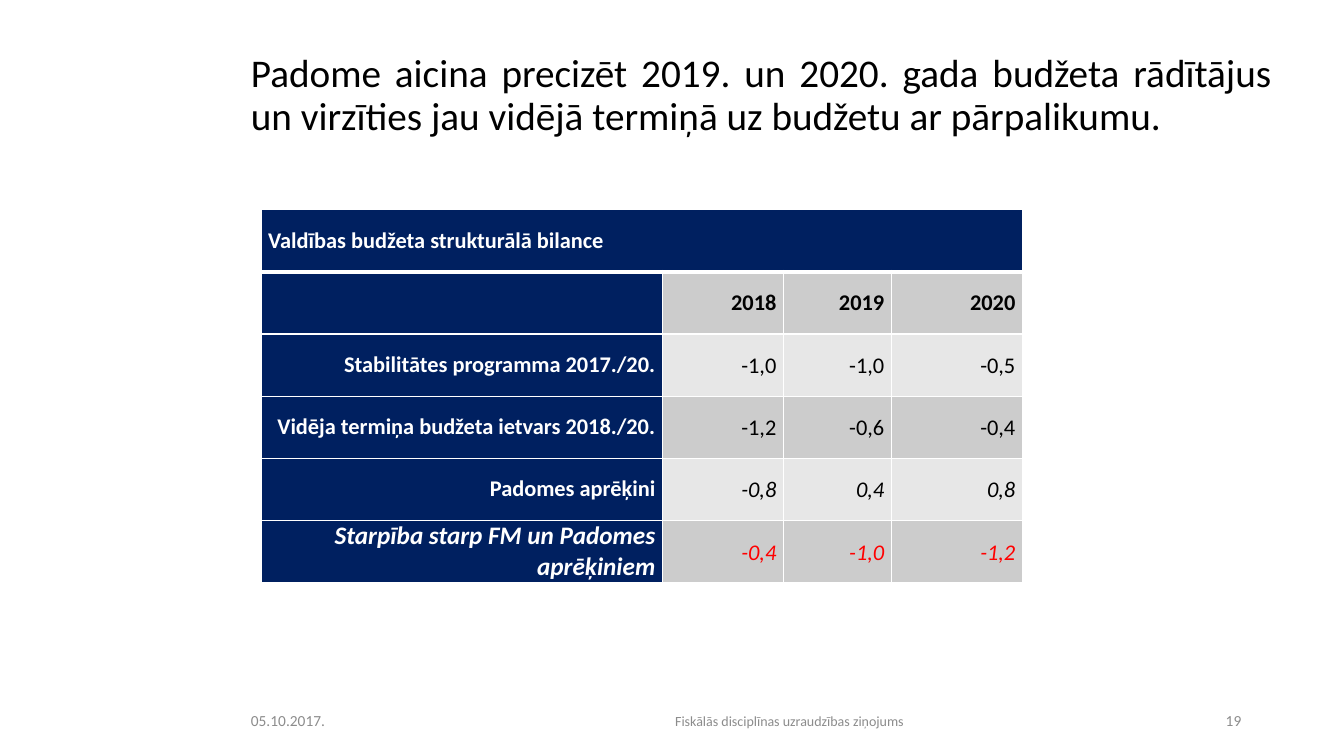
from lxml import etree
from pptx import Presentation
from pptx.dml.color import RGBColor
from pptx.enum.text import MSO_ANCHOR, PP_ALIGN
from pptx.oxml.ns import qn
from pptx.util import Inches, Pt

LEFT, CENTER, RIGHT, JUSTIFY = PP_ALIGN.LEFT, PP_ALIGN.CENTER, PP_ALIGN.RIGHT, PP_ALIGN.JUSTIFY
MIDDLE = MSO_ANCHOR.MIDDLE
FONT = "Calibri"
BLACK, WHITE, RED, NAVY, GREY = "000000", "FFFFFF", "FF0000", "002060", "8C8C8C"
BANDS = ("CCCCCC", "E7E7E7")

TITLE = ("Padome aicina precizēt 2019. un 2020. gada budžeta rādītājus "
         "un virzīties jau vidējā termiņā uz budžetu ar pārpalikumu.")
BALANCE_HEADING = "Valdības budžeta strukturālā bilance"
YEARS = ("2018", "2019", "2020")
BALANCES = (
    ("Stabilitātes programma 2017./20.", ("-1,0", "-1,0", "-0,5"), {}, {}),
    ("Vidēja termiņa budžeta ietvars 2018./20.", ("-1,2", "-0,6", "-0,4"), {}, {}),
    ("Padomes aprēķini", ("-0,8", "0,4", "0,8"), {}, {"italic": True}),
    ("Starpība starp FM un Padomes aprēķiniem", ("-0,4", "-1,0", "-1,2"),
     {"size": 18, "italic": True}, {"color": RED, "italic": True}),
)
COLUMN_WIDTHS = (3.98, 1.2, 1.07, 1.3)


def rgb(value):
    """Turn a hex string into a colour."""
    return RGBColor.from_string(value)


def write(frame, text, size, color, align=LEFT, bold=False, italic=False, spacing=None):
    """Write one formatted run into the first paragraph of a text frame."""
    paragraph = frame.paragraphs[0]
    paragraph.alignment = align
    if spacing:
        paragraph.line_spacing = spacing
    run = paragraph.add_run()
    run.text = text
    run.font.name, run.font.size = FONT, Pt(size)
    run.font.bold, run.font.italic = bold, italic
    run.font.color.rgb = rgb(color)


def add_label(slide, box, text, size, color, align=LEFT, spacing=None):
    """Add a wrapped, vertically centred text box."""
    frame = slide.shapes.add_textbox(*map(Inches, box)).text_frame
    frame.word_wrap = True
    frame.vertical_anchor = MIDDLE
    write(frame, text, size, color, align, spacing=spacing)


def set_borders(cell, bottom):
    """Draw white cell borders, with the bottom one of the given width."""
    properties = cell._tc.get_or_add_tcPr()
    for index, (side, width) in enumerate((("L", 1), ("R", 1), ("T", 1), ("B", bottom))):
        line = etree.Element(qn(f"a:ln{side}"), w=str(Pt(width)))
        fill = etree.SubElement(line, qn("a:solidFill"))
        etree.SubElement(fill, qn("a:srgbClr"), val=WHITE)
        properties.insert(index, line)


def style_cell(cell, fill, bottom=1):
    """Set the fill, margins, anchor and borders of a cell."""
    cell.fill.solid()
    cell.fill.fore_color.rgb = rgb(fill)
    cell.margin_left = cell.margin_right = Inches(0.07)
    cell.margin_top = cell.margin_bottom = 0
    cell.vertical_anchor = MIDDLE
    set_borders(cell, bottom)


def add_balance_table(slide, box):
    """Add the table of structural balances by year."""
    row_count = len(BALANCES) + 2
    table = slide.shapes.add_table(row_count, len(COLUMN_WIDTHS), *map(Inches, box)).table
    for column, width in zip(table.columns, COLUMN_WIDTHS):
        column.width = Inches(width)
    for row_index, row in enumerate(table.rows):
        row.height = Inches(box[3] / row_count)
        for column_index, cell in enumerate(row.cells):
            is_navy = row_index == 0 or column_index == 0
            style_cell(cell, NAVY if is_navy else BANDS[(row_index - 1) % 2],
                       3 if row_index == 0 else 1)

    heading = table.cell(0, 0)
    heading.merge(table.cell(0, len(YEARS)))
    write(heading.text_frame, BALANCE_HEADING, 16, WHITE, bold=True)
    for column_index, year in enumerate(YEARS, 1):
        write(table.cell(1, column_index).text_frame, year, 16, BLACK, RIGHT, bold=True)
    for row_index, (name, values, name_style, value_style) in enumerate(BALANCES, 2):
        name_format = {"size": 16, "color": WHITE, "bold": True, **name_style}
        value_format = {"size": 16, "color": BLACK, "spacing": 1.07, **value_style}
        write(table.cell(row_index, 0).text_frame, name, align=RIGHT, **name_format)
        for column_index, value in enumerate(values, 1):
            write(table.cell(row_index, column_index).text_frame, value, align=RIGHT, **value_format)


def add_footer(slide, left, top, height):
    """Add the date, report name and page number."""
    add_label(slide, (left, top, 1.64, height), "05.10.2017.", 11, GREY)
    add_label(slide, (left + 1.92, top, 7.04, height),
              "Fiskālās disciplīnas uzraudzības ziņojums", 10, GREY, CENTER)
    add_label(slide, (left + 9.23, top, 0.79, height), "19", 11, GREY, RIGHT)


def main():
    """Build and save the slide."""
    deck = Presentation()
    deck.slide_width, deck.slide_height = Inches(13.33), Inches(7.5)
    slide = deck.slides.add_slide(deck.slide_layouts[6])
    add_label(slide, (2.39, 0.4, 10.32, 1.11), TITLE, 28, BLACK, JUSTIFY, 0.9)
    add_balance_table(slide, (2.59, 2.08, sum(COLUMN_WIDTHS), 3.7))
    add_footer(slide, 2.39, 6.95, 0.4)
    deck.save("out.pptx")


if __name__ == "__main__":
    main()
